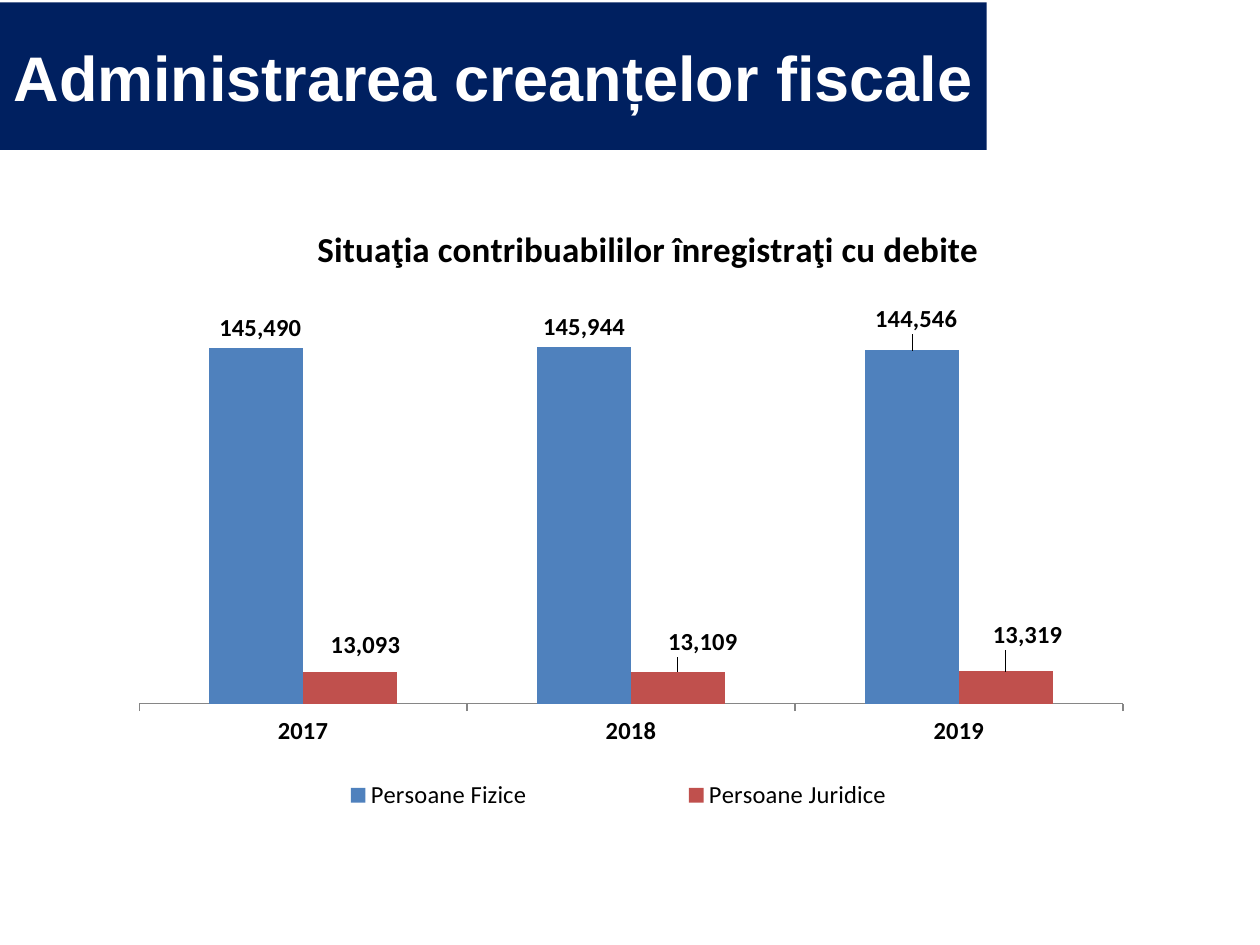
import pptx
import pptx.util
import pptx.chart.data
import pptx.dml.color
import pptx.enum.chart
import pptx.enum.text
import pptx.oxml
import pptx.oxml.ns

Cm, Pt = pptx.util.Cm, pptx.util.Pt
qn = pptx.oxml.ns.qn
ec = pptx.enum.chart

TITLE = "Administrarea creanțelor fiscale"
CHART_TITLE = "Situaţia contribuabililor înregistraţi cu debite"
YEARS = ["2017", "2018", "2019"]
SERIES = [
    ("Persoane Fizice", (145490, 145944, 144546), "4F81BD",
     {0: (0.004, 0), 2: (0.004, -0.017)}),
    ("Persoane Juridice", (13093, 13109, 13319), "C0504D",
     {0: (0.015, -0.01), 1: (0.024, -0.014), 2: (0.021, -0.024)}),
]
NUMBER_FORMAT = "#,##0"


def rgb(value):
    """Turn a hex string into a colour."""
    return pptx.dml.color.RGBColor.from_string(value)


def style(font, size, bold=False, color="000000", name="Calibri"):
    """Format a font."""
    font.size, font.bold, font.name = Pt(size), bold, name
    font.color.rgb = rgb(color)


def set_layout(parent, index, target=None, edge=True, **values):
    """Give a chart part a manual layout as fractions of the chart."""
    for old in parent.findall(qn("c:layout")):
        parent.remove(old)
    tags = [("layoutTarget", target)] if target else []
    if edge:
        tags += [("xMode", "edge"), ("yMode", "edge")]
    tags += values.items()
    body = "".join(f'<c:{tag} val="{val}"/>' for tag, val in tags)
    parent.insert(index, pptx.oxml.parse_xml(
        f'<c:layout {pptx.oxml.ns.nsdecls("c")}>'
        f"<c:manualLayout>{body}</c:manualLayout></c:layout>"))


def add_title(slide):
    """Fill the title banner."""
    s = slide.shapes.title
    s.left, s.top, s.width, s.height = Cm(0), Cm(0.05), Cm(19.89), Cm(2.97)
    s.fill.solid()
    s.fill.fore_color.rgb = rgb("002060")
    tf = s.text_frame
    tf.text = TITLE
    tf.vertical_anchor = pptx.enum.text.MSO_ANCHOR.MIDDLE
    p = tf.paragraphs[0]
    p.alignment = pptx.enum.text.PP_ALIGN.CENTER
    style(p.runs[0].font, 36, True, "FFFFFF", "Arial")


def format_series(series, color, offsets):
    """Colour a series and place its value labels."""
    series.format.fill.solid()
    series.format.fill.fore_color.rgb = rgb(color)
    series.invert_if_negative = False
    labels = series.data_labels
    labels.show_value = True
    labels.number_format, labels.number_format_is_linked = NUMBER_FORMAT, False
    labels.position = ec.XL_LABEL_POSITION.OUTSIDE_END
    style(labels.font, 14, True)
    for i in offsets:
        label = series.points[i].data_label
        style(label.font, 14, True)
        label.position = ec.XL_LABEL_POSITION.OUTSIDE_END
    for el, (x, y) in zip(series._element.iter(qn("c:dLbl")), offsets.values()):
        set_layout(el, 1, edge=False, x=x, y=y)


def add_chart(slide):
    """Add the clustered columns of taxpayers with debts."""
    data = pptx.chart.data.CategoryChartData(number_format=NUMBER_FORMAT)
    data.categories = YEARS
    for name, values, _, _ in SERIES:
        data.add_series(name, values)
    chart = slide.shapes.add_chart(
        ec.XL_CHART_TYPE.COLUMN_CLUSTERED,
        Cm(2.49), Cm(3.73), Cm(21.01), Cm(13.41), data).chart
    style(chart.font, 10)

    title = chart.chart_title
    title.text_frame.text = CHART_TITLE
    style(title.text_frame.paragraphs[0].runs[0].font, 20, True)
    set_layout(title._element, 1, x=0.18, y=0.05)

    chart.has_legend = True
    legend = chart.legend
    legend.position = ec.XL_LEGEND_POSITION.BOTTOM
    legend.include_in_layout = False
    style(legend.font, 14)
    set_layout(legend._element, 1, x=0.07, y=0.885, w=0.81, h=0.065)

    axis = chart.category_axis
    axis.major_tick_mark = ec.XL_TICK_MARK.OUTSIDE
    axis.format.line.color.rgb = rgb("868686")
    style(axis.tick_labels.font, 14, True)
    axis = chart.value_axis
    axis.visible = axis.has_major_gridlines = False
    axis.minimum_scale, axis.maximum_scale, axis.major_unit = 0, 160000, 20000

    plot = chart.plots[0]
    plot.gap_width, plot.overlap, plot.vary_by_categories = 150, 0, False
    for series, (_, _, color, offsets) in zip(plot.series, SERIES):
        format_series(series, color, offsets)
    set_layout(plot._element.getparent(), 0, "inner",
               x=0.015, y=0.192, w=0.944, h=0.588)


def main():
    """Build the slide."""
    prs = pptx.Presentation()
    prs.slide_width, prs.slide_height = Cm(25.4), Cm(19.05)
    slide = prs.slides.add_slide(prs.slide_layouts[5])
    add_title(slide)
    add_chart(slide)
    prs.save("out.pptx")


if __name__ == "__main__":
    main()
